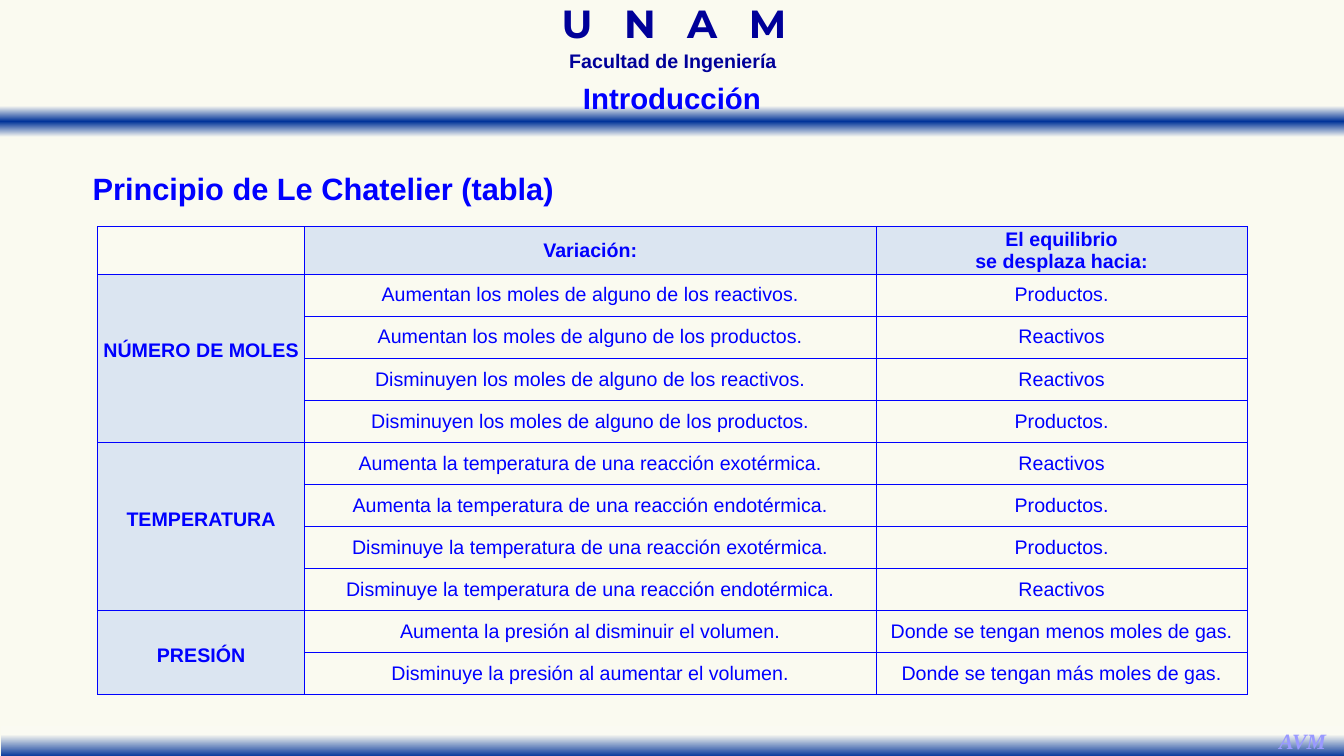
from dataclasses import dataclass

from pptx import Presentation
from pptx.dml.color import RGBColor
from pptx.enum.shapes import MSO_SHAPE
from pptx.enum.text import MSO_ANCHOR, PP_ALIGN
from pptx.oxml import parse_xml
from pptx.oxml.ns import nsdecls
from pptx.util import Inches, Pt

CENTER, JUSTIFY = PP_ALIGN.CENTER, PP_ALIGN.JUSTIFY
TOP, MIDDLE = MSO_ANCHOR.TOP, MSO_ANCHOR.MIDDLE
RECTANGLE = MSO_SHAPE.RECTANGLE

TITLE = "Introducción"
SUBTITLE = "Principio de Le Chatelier (tabla)"
UNIVERSITY = "U N A M"
FACULTY = "Facultad de Ingeniería"
INITIALS = "AVM"
HEADERS = ["", "Variación:", "El equilibrio\nse desplaza hacia:"]
GROUPS = [
    ("NÚMERO DE MOLES", [
        ("Aumentan los moles de alguno de los reactivos.", "Productos."),
        ("Aumentan los moles de alguno de los productos.", "Reactivos"),
        ("Disminuyen los moles de alguno de los reactivos.", "Reactivos"),
        ("Disminuyen los moles de alguno de los productos.", "Productos."),
    ]),
    ("TEMPERATURA", [
        ("Aumenta la temperatura de una reacción exotérmica.", "Reactivos"),
        ("Aumenta la temperatura de una reacción endotérmica.", "Productos."),
        ("Disminuye la temperatura de una reacción exotérmica.", "Productos."),
        ("Disminuye la temperatura de una reacción endotérmica.", "Reactivos"),
    ]),
    ("PRESIÓN", [
        ("Aumenta la presión al disminuir el volumen.",
         "Donde se tengan menos moles de gas."),
        ("Disminuye la presión al aumentar el volumen.",
         "Donde se tengan más moles de gas."),
    ]),
]
TABLE_LEFT, TABLE_TOP, TABLE_HEIGHT, HEADER_HEIGHT = 0.97, 2.25, 4.64, 0.47
COLUMN_WIDTHS = [2.05, 5.67, 3.68]


@dataclass(frozen=True)
class Theme:
    background: str = "FAFAF0"
    band_light: str = "FAFAF2"
    band_dark: str = "003399"
    navy: str = "000099"
    blue: str = "0000FF"
    lilac: str = "9999FF"
    header_fill: str = "DBE5F1"
    body_font: str = "Arial"
    university_font: str = "Montserrat"
    initials_font: str = "Times New Roman"
    university_size: float = 28
    subtitle_size: float = 22
    title_size: float = 21
    initials_size: float = 15.6
    body_size: float = 14


THEME = Theme()


def format_text(frame, size, color, font=THEME.body_font, bold=True,
                italic=False, align=CENTER, spacing=1.0):
    for paragraph in frame.paragraphs:
        paragraph.alignment = align
        paragraph.line_spacing = spacing
        paragraph.space_before = paragraph.space_after = Pt(0)
        paragraph.font.name = font
        paragraph.font.size = Pt(size)
        paragraph.font.bold = bold
        paragraph.font.italic = italic
        paragraph.font.color.rgb = RGBColor.from_string(color)


def add_text(slide, box, text, size, color, wrap=True, **style):
    shape = slide.shapes.add_textbox(*map(Inches, box))
    frame = shape.text_frame
    frame.word_wrap = wrap
    frame.text = text
    format_text(frame, size, color, **style)
    return frame


def add_band(slide, box, stops):
    """Add a borderless bar with a vertical gradient of (percent, colour) stops."""
    band = slide.shapes.add_shape(RECTANGLE, *map(Inches, box))
    band.shadow.inherit = False
    band.line.fill.background()
    stop_xml = "".join(
        f'<a:gs pos="{percent * 1000}"><a:srgbClr val="{color}"/></a:gs>'
        for percent, color in stops)
    gradient = parse_xml(
        f'<a:gradFill {nsdecls("a")} rotWithShape="1"><a:gsLst>{stop_xml}</a:gsLst>'
        '<a:lin ang="5400000" scaled="0"/></a:gradFill>')
    band._element.spPr.insert(2, gradient)


def add_borders(cell):
    properties = cell._tc.get_or_add_tcPr()
    for side in "LRTB":
        properties.append(parse_xml(
            f'<a:ln{side} {nsdecls("a")} w="12700"><a:solidFill>'
            f'<a:srgbClr val="{THEME.blue}"/></a:solidFill></a:ln{side}>'))


def fill_cell(cell, text, heading):
    cell.text = text
    cell.vertical_anchor = MIDDLE
    cell.margin_left = cell.margin_right = Inches(0.04)
    cell.margin_top = cell.margin_bottom = 0
    format_text(cell.text_frame, THEME.body_size, THEME.blue, bold=heading)
    add_borders(cell)
    if heading and text:
        cell.fill.solid()
        cell.fill.fore_color.rgb = RGBColor.from_string(THEME.header_fill)
    else:
        cell.fill.background()


def add_equilibrium_table(slide):
    rows = [HEADERS]
    for name, effects in GROUPS:
        rows += [(name if index == 0 else "", *effect)
                 for index, effect in enumerate(effects)]
    table = slide.shapes.add_table(
        len(rows), len(HEADERS), Inches(TABLE_LEFT), Inches(TABLE_TOP),
        Inches(sum(COLUMN_WIDTHS)), Inches(TABLE_HEIGHT)).table
    table.first_row = table.horz_banding = False
    for column, width in zip(table.columns, COLUMN_WIDTHS):
        column.width = Inches(width)
    body_height = (TABLE_HEIGHT - HEADER_HEIGHT) / (len(rows) - 1)
    for row_index, row in enumerate(rows):
        table.rows[row_index].height = Inches(body_height if row_index else HEADER_HEIGHT)
        for column_index, text in enumerate(row):
            fill_cell(table.cell(row_index, column_index), text,
                      heading=row_index == 0 or column_index == 0)
    first = 1
    for _, effects in GROUPS:
        last = first + len(effects) - 1
        group_cell = table.cell(first, 0)
        group_cell.merge(table.cell(last, 0))
        if len(effects) > 2:
            group_cell.margin_bottom = Inches(0.14)
        else:
            group_cell.margin_top = Inches(0.06)
        first = last + 1


def add_university(slide):
    """Write the widely tracked initials; the last letter takes no tracking."""
    frame = add_text(slide, (4.73, 0.07, 3.91, 0.45), UNIVERSITY[:-1],
                     THEME.university_size, THEME.navy,
                     font=THEME.university_font, spacing=0.7)
    paragraph = frame.paragraphs[0]
    paragraph.runs[0].font._element.set("spc", "730")
    paragraph.add_run().text = UNIVERSITY[-1]


def place_title(slide):
    title = slide.shapes.title
    title.left, title.top, title.width, title.height = map(
        Inches, (5.67, 0.74, 1.99, 0.45))
    title.text = TITLE
    title.text_frame.word_wrap = False
    title.text_frame.vertical_anchor = MIDDLE
    format_text(title.text_frame, THEME.title_size, THEME.blue)
    slide.shapes._spTree.append(title._element)  # in front of the header band


def main():
    presentation = Presentation()
    presentation.slide_width, presentation.slide_height = Inches(13.33), Inches(7.5)
    slide = presentation.slides.add_slide(presentation.slide_layouts[5])
    slide.background.fill.solid()
    slide.background.fill.fore_color.rgb = RGBColor.from_string(THEME.background)

    light, dark = THEME.band_light, THEME.band_dark
    add_band(slide, (-0.01, 1.05, 13.35, 0.31), [(0, light), (50, dark), (100, light)])
    add_university(slide)
    add_text(slide, (4.89, 0.5, 3.57, 0.27), FACULTY, THEME.body_size, THEME.navy,
             spacing=0.7)
    add_band(slide, (0.01, 7.2, 13.35, 0.31), [(28, light), (100, dark)])
    add_text(slide, (12.58, 7.17, 0.68, 0.37), INITIALS, THEME.initials_size,
             THEME.lilac, wrap=False, font=THEME.initials_font, italic=True)
    subtitle = add_text(slide, (0.82, 1.49, 11.7, 0.56), SUBTITLE,
                        THEME.subtitle_size, THEME.blue, align=JUSTIFY, spacing=1.4)
    subtitle.vertical_anchor = TOP
    add_equilibrium_table(slide)
    place_title(slide)
    presentation.save("out.pptx")


if __name__ == "__main__":
    main()
